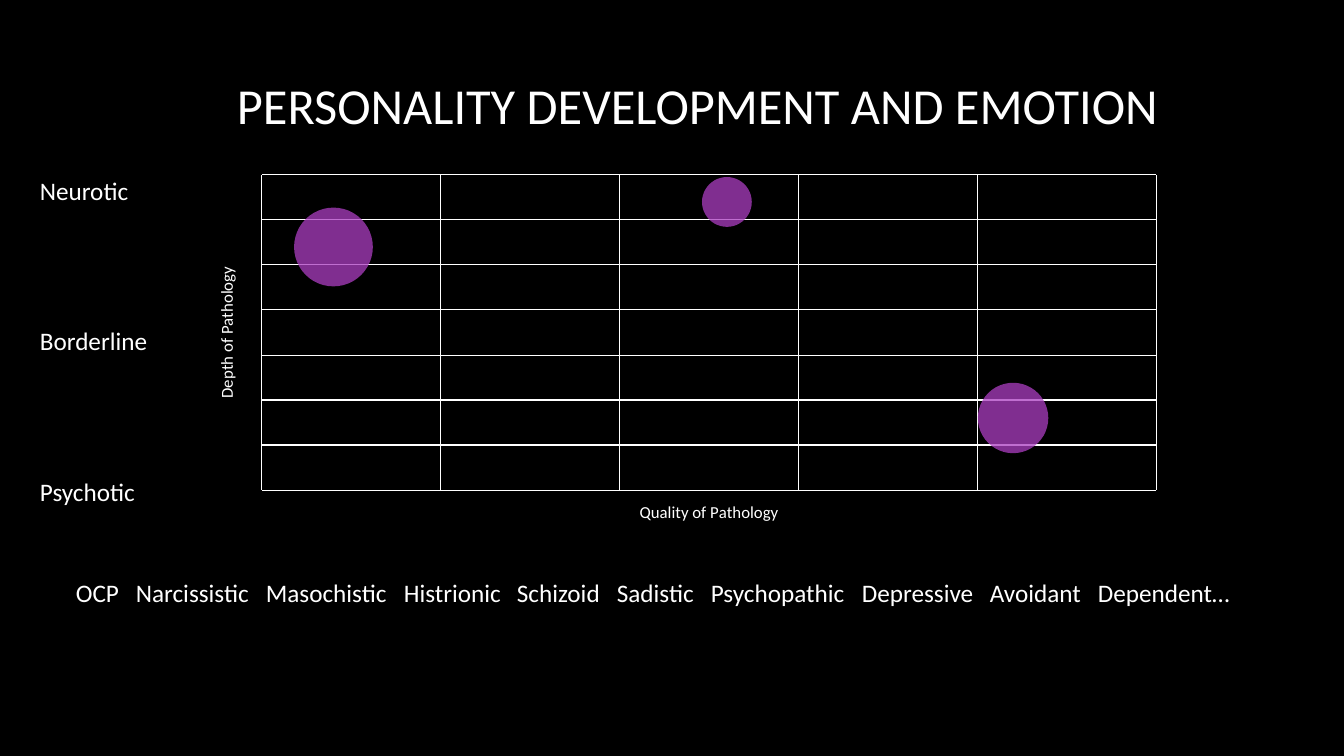
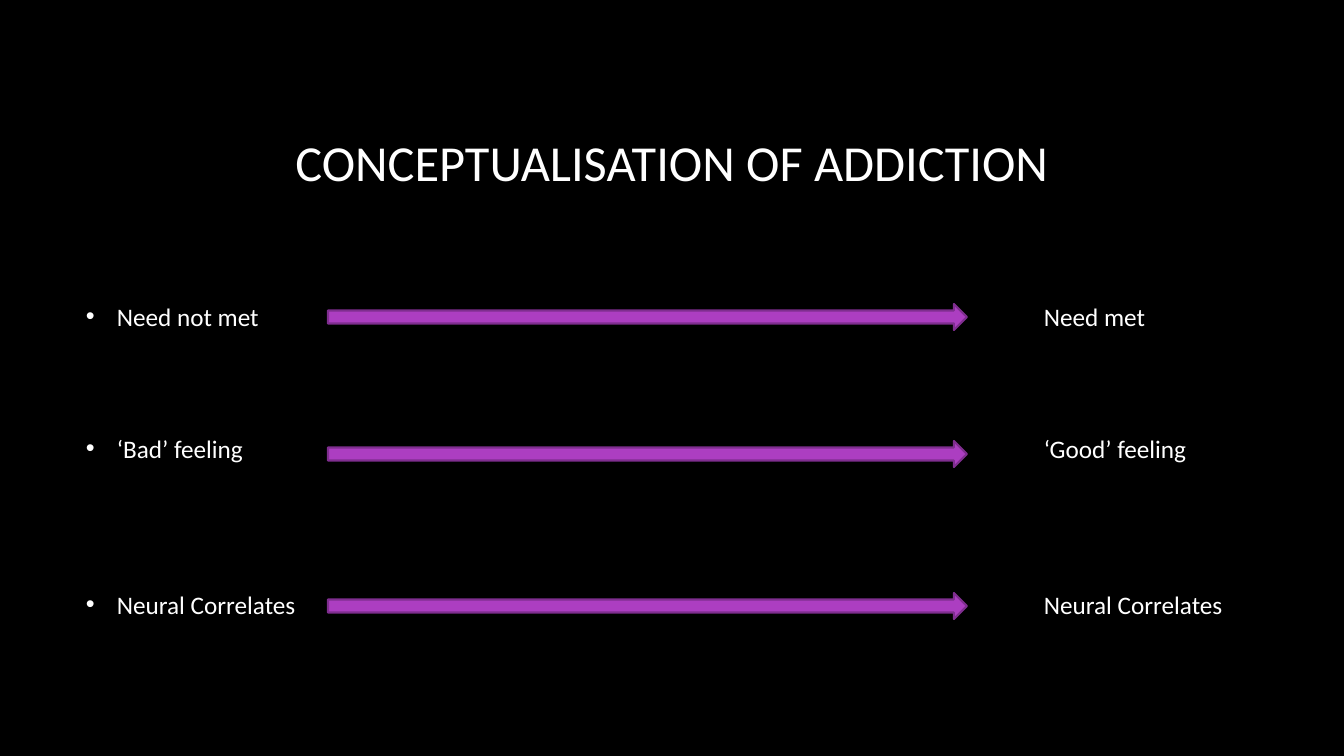
from lxml import etree
from pptx import Presentation, util as u
from pptx.chart import data
from pptx.dml.color import RGBColor
from pptx.enum import chart as ch, shapes, text
from pptx.oxml import parse_xml
from pptx.oxml.ns import nsdecls, qn

HUE = {"back": "000000", "ink": "FFFFFF", "fill": "AC3EC1", "edge": "7F2E8F"}
FACE = "Calibri"
SCALE = 914400 / 100.8  # EMU in one px


def px(n):
    return u.Emu(round(n * SCALE))


def write(page, box, lines, size=18, tabs=(), dot=False, **form):
    """Add a text box; form holds paragraph format values."""
    frame = page.shapes.add_textbox(*map(px, box)).text_frame
    frame.word_wrap = True
    if size > 18 or dot:
        frame.vertical_anchor = text.MSO_ANCHOR.MIDDLE
    for i, line in enumerate(lines):
        para = frame.paragraphs[0] if i == 0 else frame.add_paragraph()
        props = para._p.get_or_add_pPr()
        if dot:
            props.set("marL", str(px(31)))
            props.set("indent", str(px(-31)))
            font = etree.SubElement(props, qn("a:buFont"))
            font.set("typeface", "Arial")
            etree.SubElement(props, qn("a:buChar")).set("char", "•")
        if tabs:
            stops = etree.SubElement(props, qn("a:tabLst"))
            for stop in tabs:
                tab = etree.SubElement(stops, qn("a:tab"))
                tab.set("pos", str(px(stop)))
                tab.set("algn", "l")
        for name, val in form.items():
            if name != "space_before" or i:
                setattr(para, name, val)
        run = para.add_run()
        run.text = line
        run.font.color.rgb = RGBColor.from_string(HUE["ink"])
        for name, val in {"name": FACE, "size": u.Pt(size)}.items():
            setattr(run.font, name, val)


deck = Presentation()
deck.slide_width, deck.slide_height = px(1344), px(756)

# Pages with their titles
heads = [
    ("PERSONALITY DEVELOPMENT AND EMOTION", (227, 24, 1117, 160), text.PP_ALIGN.LEFT),
    ("CONCEPTUALISATION OF ADDICTION", (0, 81, 1344, 160), text.PP_ALIGN.CENTER),
]
pages = []
for head, box, align in heads:
    page = deck.slides.add_slide(deck.slide_layouts[6])
    page.background.fill.solid()
    page.background.fill.fore_color.rgb = RGBColor.from_string(HUE["back"])
    write(page, box, [head], size=36, alignment=align)
    pages.append(page)
first, second = pages

# Bubble chart
feed = data.BubbleChartData()
row = feed.add_series("Series 1")
for point in [(0.7, 2.7, 10), (1.8, 3.2, 4), (2.6, 0.8, 8)]:
    row.add_data_point(*point)
area = (192, 167, 985, 382)
chart = first.shapes.add_chart(
    ch.XL_CHART_TYPE.BUBBLE, *map(px, area), feed).chart
chart.has_legend = chart.has_title = False
chart.font.name, chart.font.size = FACE, u.Pt(10)
chart.font.color.rgb = RGBColor.from_string(HUE["ink"])

look = chart.plots[0].series[0].format
look.fill.solid()
look.fill.fore_color.rgb = RGBColor.from_string(HUE["fill"])
look.line.fill.background()
tint = look.fill._xPr.find(".//" + qn("a:srgbClr"))
etree.SubElement(tint, qn("a:alpha")).set("val", "75000")

# Axes show only their titles and grids
for axis, name, low, high in [
    (chart.category_axis, "Quality of Pathology", 0.5, 3),
    (chart.value_axis, "Depth of Pathology", 0, 3.5),
]:
    for key, val in {"minimum_scale": low, "maximum_scale": high,
                     "major_unit": 0.5, "has_major_gridlines": True,
                     "visible": False}.items():
        setattr(axis, key, val)
    grid = axis.major_gridlines.format.line
    grid.color.rgb = RGBColor.from_string(HUE["ink"])
    grid.width = u.Pt(0.75)
    label = axis.axis_title.text_frame
    label.text = name
    font = label.paragraphs[0].runs[0].font
    font.color.rgb = RGBColor.from_string(HUE["ink"])
    for key, val in {"name": FACE, "size": u.Pt(12), "bold": False}.items():
        setattr(font, key, val)

# Inner plot area, as shares of the chart
inner = {"x": 70 / 985, "y": 8 / 382, "w": 894 / 985, "h": 315 / 382}
marks = "".join(f'<c:{k} val="{v:.3f}"/>' for k, v in inner.items())
room = chart._chartSpace.find(".//" + qn("c:plotArea"))
for old in room.findall(qn("c:layout")):
    room.remove(old)
room.insert(0, parse_xml(
    f'<c:layout {nsdecls("c")}><c:manualLayout><c:layoutTarget val="inner"/>'
    f'<c:xMode val="edge"/><c:yMode val="edge"/>{marks}'
    "</c:manualLayout></c:layout>"))

# Depth levels and personality types
write(first, (30, 170, 140, 346), ["Neurotic", "Borderline", "Psychotic"],
      space_before=u.Pt(86))
kinds = ["OCP", "Narcissistic", "Masochistic", "Histrionic", "Schizoid",
         "Sadistic", "Psychopathic", "Depressive", "Avoidant", "Dependent…"]
write(first, (66, 572, 1247, 40), ["\t".join(kinds)],
      tabs=(60, 190, 328, 441, 541, 635, 786, 914, 1022))

# Rows from need to relief
for left, right, top, shaft in [
    ("Need not met", "Need met", 236, 304),
    ("‘Bad’ feeling", "‘Good’ feeling", 368, 441),
    ("Neural Correlates", "Neural Correlates", 524, 593),
]:
    write(second, (76, top, 1179, 160), [f"{left}\t{right}"], tabs=[958],
          dot=True, space_after=u.Pt(10))
    arrow = second.shapes.add_shape(
        shapes.MSO_SHAPE.RIGHT_ARROW, *map(px, (328, shaft, 639, 26)))
    arrow.shadow.inherit = False
    arrow.fill.solid()
    arrow.fill.fore_color.rgb = RGBColor.from_string(HUE["fill"])
    arrow.line.color.rgb = RGBColor.from_string(HUE["edge"])
    arrow.line.width = u.Pt(1.5)

deck.save("out.pptx")
